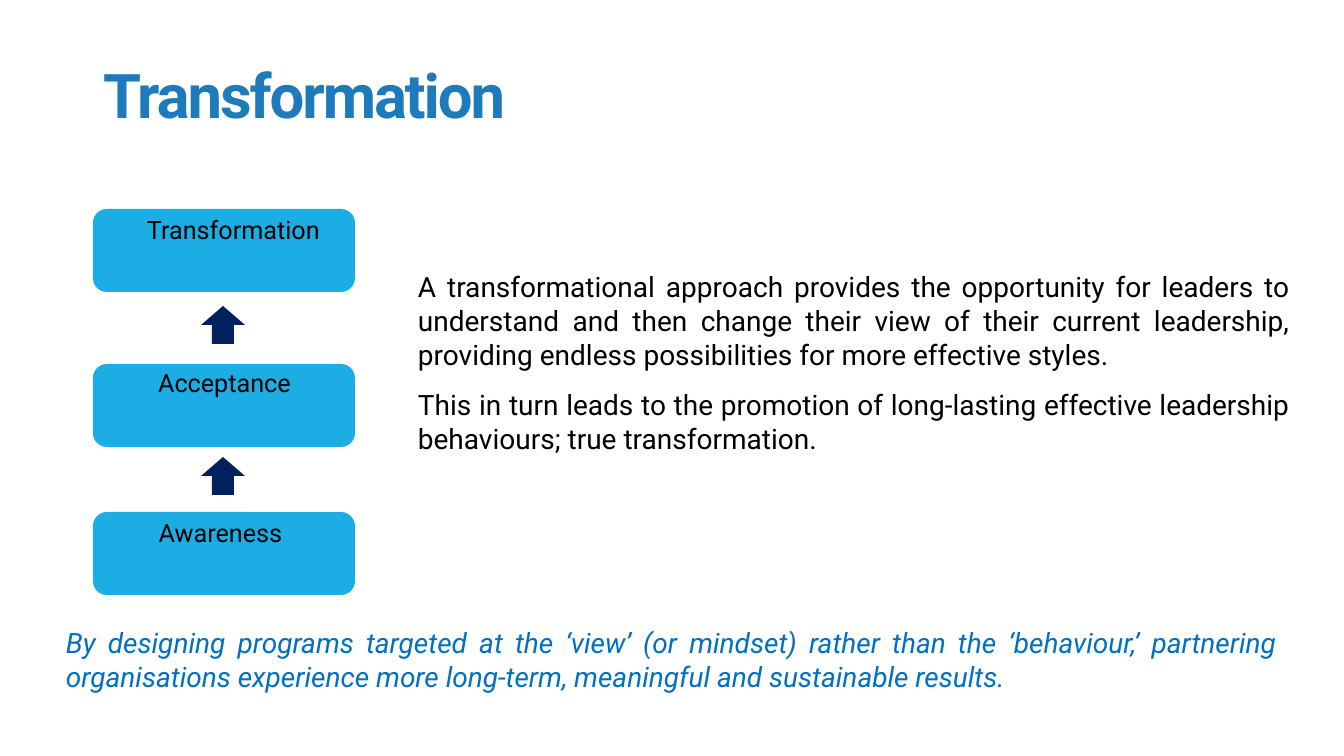
import pptx
import pptx.dml.color
import pptx.enum.shapes
import pptx.enum.text
import pptx.util

PX = 914400 / 100.8
SHAPE = pptx.enum.shapes.MSO_SHAPE
ALIGN = pptx.enum.text.PP_ALIGN
ANCHOR = pptx.enum.text.MSO_ANCHOR


def rgb(value):
    return pptx.dml.color.RGBColor.from_string(value)


def write(sp, texts, size, color, align, bold=False, italic=False, gap=0):
    """Fill a shape with paragraphs of one format; gap is the space between them in points."""
    tf = sp.text_frame
    tf.word_wrap = True
    for i, text in enumerate(texts):
        p = tf.add_paragraph() if i else tf.paragraphs[0]
        p.alignment = align
        p.space_before = pptx.util.Pt(gap if i else 0)
        r = p.add_run()
        r.text = text
        r.font.name = "Roboto"
        r.font.size = pptx.util.Pt(size)
        r.font.bold = bold
        r.font.italic = italic
        r.font.color.rgb = rgb(color)
    return tf


prs = pptx.Presentation()
prs.slide_width = round(1344 * PX)
prs.slide_height = round(756 * PX)
s = prs.slides.add_slide(prs.slide_layouts[5])

# Title
title = s.shapes.title
title.left, title.top, title.width, title.height = [round(v * PX) for v in (93, 40, 1159, 108)]
tf = write(title, ["Transformation"], 44, "1E7BBB", ALIGN.LEFT, bold=True)
tf.vertical_anchor = ANCHOR.MIDDLE
p = tf.paragraphs[0]
p.line_spacing = pptx.util.Pt(53)
p.runs[0].font._element.set("spc", "-150")

# Steps and the arrows between them
blocks = [(SHAPE.ROUNDED_RECTANGLE, 93, top, 262, 83, "1CADE4") for top in (209, 364, 512)]
blocks += [(SHAPE.UP_ARROW, 201, top, 44, 38, "002060") for top in (306, 457)]
for kind, left, top, width, height, color in blocks:
    sp = s.shapes.add_shape(kind, *[round(v * PX) for v in (left, top, width, height)])
    sp.shadow.inherit = False
    sp.fill.solid()
    sp.fill.fore_color.rgb = rgb(color)
    sp.line.fill.background()

# Step labels and running text
black = {"color": "000000"}
label = {"size": 18, "align": ALIGN.CENTER, **black}
body = {"size": 20, "align": ALIGN.JUSTIFY}
text_boxes = [
    ((114, 209, 239, 71), ["Transformation"], label),
    ((105, 362, 239, 92), ["Acceptance"], label),
    ((101, 512, 239, 94), ["Awareness"], label),
    ((56, 621, 1231, 78), [
        "By designing programs targeted at the ‘view’ (or mindset) rather than the ‘behaviour,’ "
        "partnering organisations experience more long-term, meaningful and sustainable results.",
    ], {"color": "0070C0", "italic": True, **body}),
    ((408, 265, 892, 197), [
        "A transformational approach provides the opportunity for leaders to understand and then "
        "change their view of their current leadership, providing endless possibilities for more "
        "effective styles.",
        "This in turn leads to the promotion of long-lasting effective leadership behaviours; "
        "true transformation.",
    ], {"gap": 12, **black, **body}),
]
for box, texts, style in text_boxes:
    write(s.shapes.add_textbox(*[round(v * PX) for v in box]), texts, **style)

prs.save("out.pptx")
